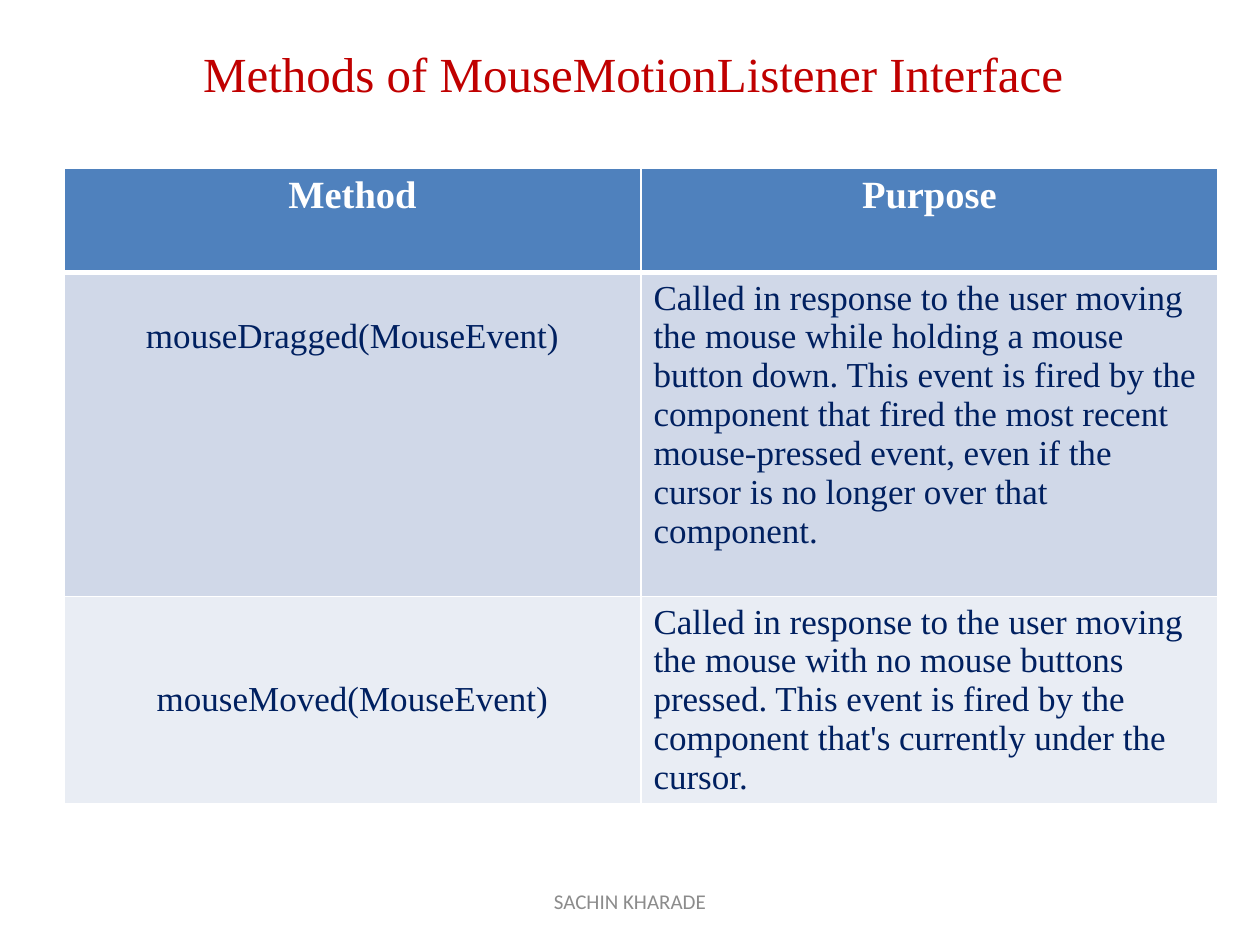
"""Build the slide on the methods of the MouseMotionListener interface."""
from dataclasses import dataclass
from typing import Any

import lxml.etree
import pptx
import pptx.dml.color
import pptx.enum.text
import pptx.oxml.ns
import pptx.util

Cm = pptx.util.Cm
ALIGN = pptx.enum.text.PP_ALIGN
ANCHOR = pptx.enum.text.MSO_ANCHOR


@dataclass(frozen=True)
class Theme:
    """Colours, fonts and type sizes of the slide."""

    title: str = "C00000"
    header_fill: str = "4F81BD"
    odd_fill: str = "D0D8E8"
    even_fill: str = "E9EDF4"
    white: str = "FFFFFF"
    body: str = "002060"
    footer: str = "8C8C8C"
    serif: str = "Times New Roman"
    sans: str = "Calibri"
    title_size: int = 28
    header_size: int = 22
    body_size: int = 20
    footer_size: int = 12


@dataclass(frozen=True)
class MethodRow:
    """One table row, with the top margin of its method cell."""

    method: str
    purpose: str
    fill: str
    height: float
    method_top: float = 0.13
    header: bool = False


THEME = Theme()
COLUMN_WIDTH = 11.63
ROWS = (
    MethodRow("Method", "Purpose", THEME.header_fill, 2.1, header=True),
    MethodRow(
        "mouseDragged(MouseEvent)",
        "Called in response to the user moving the mouse while holding a mouse "
        "button down. This event is fired by the component that fired the most "
        "recent mouse-pressed event, even if the cursor is no longer over that "
        "component.",
        THEME.odd_fill, 6.53, 0.91),
    MethodRow(
        "mouseMoved(MouseEvent)",
        "Called in response to the user moving the mouse with no mouse buttons "
        "pressed. This event is fired by the component that's currently under "
        "the cursor.",
        THEME.even_fill, 4.14, 1.69),
)


def apply(target: Any, values: dict[str, Any]) -> None:
    """Set each named attribute on the target."""
    for name, value in values.items():
        setattr(target, name, value)


def write(frame: Any, text: str, font: str, size: int, colour: str,
          align: Any = ALIGN.CENTER, bold: bool = False) -> None:
    """Fill a text frame with one formatted paragraph."""
    paragraph = frame.paragraphs[0]
    paragraph.alignment = align
    run = paragraph.add_run()
    run.text = text
    apply(run.font, {"name": font, "size": pptx.util.Pt(size), "bold": bold})
    run.font.color.rgb = pptx.dml.color.RGBColor.from_string(colour)


def draw_borders(cell: Any, widths: dict[str, int]) -> None:
    """Outline a cell with white lines of the given widths in points."""
    qn = pptx.oxml.ns.qn
    properties = cell._tc.get_or_add_tcPr()
    for index, (side, width) in enumerate(widths.items()):
        line = lxml.etree.Element(qn(f"a:ln{side}"), w=str(pptx.util.Pt(width)))
        fill = lxml.etree.SubElement(line, qn("a:solidFill"))
        lxml.etree.SubElement(fill, qn("a:srgbClr"), val=THEME.white)
        properties.insert(index, line)


def draw_row(table: Any, index: int, row: MethodRow) -> None:
    """Draw the method and purpose cells of one row."""
    table.rows[index].height = Cm(row.height)
    size = THEME.header_size if row.header else THEME.body_size
    colour = THEME.white if row.header else THEME.body
    purpose_align = ALIGN.CENTER if row.header else ALIGN.LEFT
    widths = {"L": 1, "R": 1, "T": 3 if index == 1 else 1, "B": 3 if row.header else 1}
    contents = ((row.method, ALIGN.CENTER, row.method_top),
                (row.purpose, purpose_align, 0.13))
    for column, (text, align, top) in enumerate(contents):
        cell = table.cell(index, column)
        apply(cell, {"margin_top": Cm(top), "vertical_anchor": ANCHOR.TOP})
        cell.fill.solid()
        cell.fill.fore_color.rgb = pptx.dml.color.RGBColor.from_string(row.fill)
        draw_borders(cell, widths)
        write(cell.text_frame, text, THEME.serif, size, colour, align, row.header)


def main() -> None:
    """Assemble and save the slide."""
    deck = pptx.Presentation()
    apply(deck, {"slide_width": Cm(25.4), "slide_height": Cm(19.05)})
    slide = deck.slides.add_slide(deck.slide_layouts.get_by_name("Title Only"))

    title = slide.shapes.title
    apply(title, {"left": Cm(1.4), "top": Cm(0), "width": Cm(22.73), "height": Cm(2.92)})
    title.text_frame.vertical_anchor = ANCHOR.MIDDLE
    write(title.text_frame, "Methods of MouseMotionListener Interface",
          THEME.serif, THEME.title_size, THEME.title)

    methods = slide.shapes.add_table(
        len(ROWS), 2, Cm(1.29), Cm(3.39), Cm(2 * COLUMN_WIDTH),
        Cm(sum(row.height for row in ROWS))).table
    for column in methods.columns:
        column.width = Cm(COLUMN_WIDTH)
    for index, row in enumerate(ROWS):
        draw_row(methods, index, row)

    footer = slide.shapes.add_textbox(Cm(8.68), Cm(17.66), Cm(8.04), Cm(1.01))
    apply(footer.text_frame, {"word_wrap": True, "vertical_anchor": ANCHOR.MIDDLE})
    write(footer.text_frame, "SACHIN KHARADE",
          THEME.sans, THEME.footer_size, THEME.footer)

    deck.save("out.pptx")


if __name__ == "__main__":
    main()
